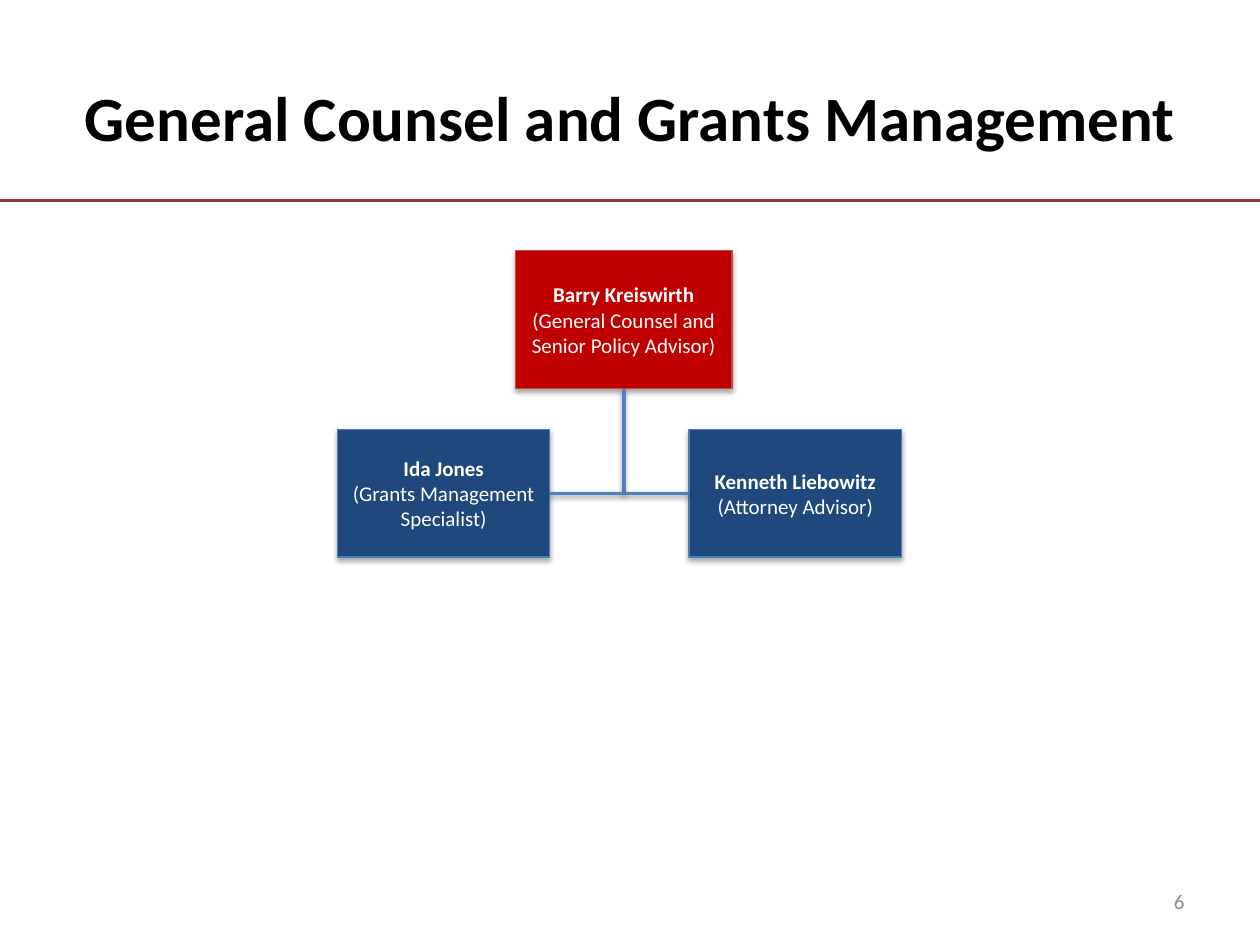
from dataclasses import dataclass

from lxml import etree
from pptx import Presentation
from pptx.dml.color import RGBColor
from pptx.enum.shapes import MSO_CONNECTOR, MSO_SHAPE
from pptx.enum.text import MSO_ANCHOR, PP_ALIGN
from pptx.oxml.ns import qn
from pptx.shapes.autoshape import Shape
from pptx.shapes.connector import Connector
from pptx.slide import Slide
from pptx.util import Cm, Length, Pt

RECTANGLE = MSO_SHAPE.RECTANGLE
STRAIGHT = MSO_CONNECTOR.STRAIGHT
MIDDLE = MSO_ANCHOR.MIDDLE
CENTER, RIGHT = PP_ALIGN.CENTER, PP_ALIGN.RIGHT
LEFT_SIDE, BOTTOM_SIDE, RIGHT_SIDE = 1, 2, 3

FONT = "Calibri"
WHITE = "FFFFFF"
BLUE, BLUE_EDGE = "1F497D", "4B7EBC"
RED, RED_EDGE = "C00000", "BF4C48"
LINK_COLOR = "4F81BD"


@dataclass(frozen=True)
class Position:
    """One box of the chart; lengths in centimetres."""
    name: str
    role: str
    left: float
    top: float
    width: float
    height: float
    fill: str = BLUE
    edge: str = BLUE_EDGE


COUNSEL = Position("Barry Kreiswirth", "(General Counsel and Senior Policy Advisor)",
                   10.39, 5.05, 4.37, 2.79, RED, RED_EDGE)
GRANTS = Position("Ida Jones", "(Grants Management Specialist)", 6.81, 8.66, 4.27, 2.57)
ATTORNEY = Position("Kenneth Liebowitz", "(Attorney Advisor)", 13.89, 8.66, 4.29, 2.57)


def color(value: str) -> RGBColor:
    return RGBColor.from_string(value)


def set_shadow(shape: Shape | Connector, opacity: int, distance: float) -> None:
    """Add a soft black shadow straight below; call after the line is set."""
    effects = etree.SubElement(shape._element.spPr, qn("a:effectLst"))
    shadow = etree.SubElement(effects, qn("a:outerShdw"), blurRad=str(Pt(3.1)),
                              dist=str(Pt(distance)), dir="5400000", rotWithShape="0")
    black = etree.SubElement(shadow, qn("a:srgbClr"), val="000000")
    etree.SubElement(black, qn("a:alpha"), val=str(opacity * 1000))


def add_text(slide: Slide, text: str, left: float, top: float, width: float, height: float,
             size: int, text_color: str, alignment: PP_ALIGN, bold: bool = False) -> None:
    box = slide.shapes.add_textbox(Cm(left), Cm(top), Cm(width), Cm(height))
    frame = box.text_frame
    frame.word_wrap = True
    frame.vertical_anchor = MIDDLE
    paragraph = frame.paragraphs[0]
    paragraph.text = text
    paragraph.alignment = alignment
    font = paragraph.font
    font.name, font.size, font.bold = FONT, Pt(size), bold
    font.color.rgb = color(text_color)


def add_position(slide: Slide, position: Position) -> Shape:
    shape = slide.shapes.add_shape(RECTANGLE, Cm(position.left), Cm(position.top),
                                   Cm(position.width), Cm(position.height))
    shape.fill.solid()
    shape.fill.fore_color.rgb = color(position.fill)
    shape.line.color.rgb = color(position.edge)
    shape.line.width = Pt(0.75)
    set_shadow(shape, 35, 1.8)

    frame = shape.text_frame
    frame.word_wrap = True
    frame.vertical_anchor = MIDDLE
    lines = ((frame.paragraphs[0], position.name, True),
             (frame.add_paragraph(), position.role, False))
    for paragraph, text, bold in lines:
        paragraph.text = text
        paragraph.alignment = CENTER
        font = paragraph.font
        font.name, font.size, font.bold = FONT, Pt(12), bold
        font.color.rgb = color(WHITE)
    return shape


def add_line(slide: Slide, start: tuple[Length, Length], end: tuple[Length, Length],
             line_color: str) -> Connector:
    line = slide.shapes.add_connector(STRAIGHT, *start, *end)
    line.line.color.rgb = color(line_color)
    line.line.width = Pt(2)
    return line


def add_chart_links(slide: Slide, counsel: Shape, grants: Shape, attorney: Shape) -> None:
    """Drop a stem from the counsel to the bar that joins the two lower boxes."""
    middle = counsel.left + counsel.width // 2
    bar_y = grants.top + grants.height // 2

    stem = add_line(slide, (middle, counsel.top + counsel.height), (middle, bar_y), LINK_COLOR)
    stem.begin_connect(counsel, BOTTOM_SIDE)

    bar = add_line(slide, (grants.left + grants.width, bar_y), (attorney.left, bar_y), LINK_COLOR)
    bar.begin_connect(grants, RIGHT_SIDE)
    bar.end_connect(attorney, LEFT_SIDE)

    for link in (stem, bar):
        set_shadow(link, 38, 1.6)


def main() -> None:
    presentation = Presentation()
    presentation.slide_width, presentation.slide_height = Cm(25.4), Cm(19.05)
    slide = presentation.slides.add_slide(presentation.slide_layouts[6])

    rule = add_line(slide, (Cm(0), Cm(4.04)), (Cm(25.4), Cm(4.04)), "953735")
    etree.SubElement(rule._element.spPr, qn("a:effectLst"))
    add_text(slide, "General Counsel and Grants Management", 1.27, 0.76, 22.86, 3.18,
             36, "000000", CENTER, bold=True)
    add_text(slide, "6", 18.2, 17.65, 5.93, 1.02, 12, "8C8C8C", RIGHT)

    counsel, grants, attorney = (add_position(slide, position)
                                 for position in (COUNSEL, GRANTS, ATTORNEY))
    add_chart_links(slide, counsel, grants, attorney)

    presentation.save("out.pptx")


if __name__ == "__main__":
    main()
